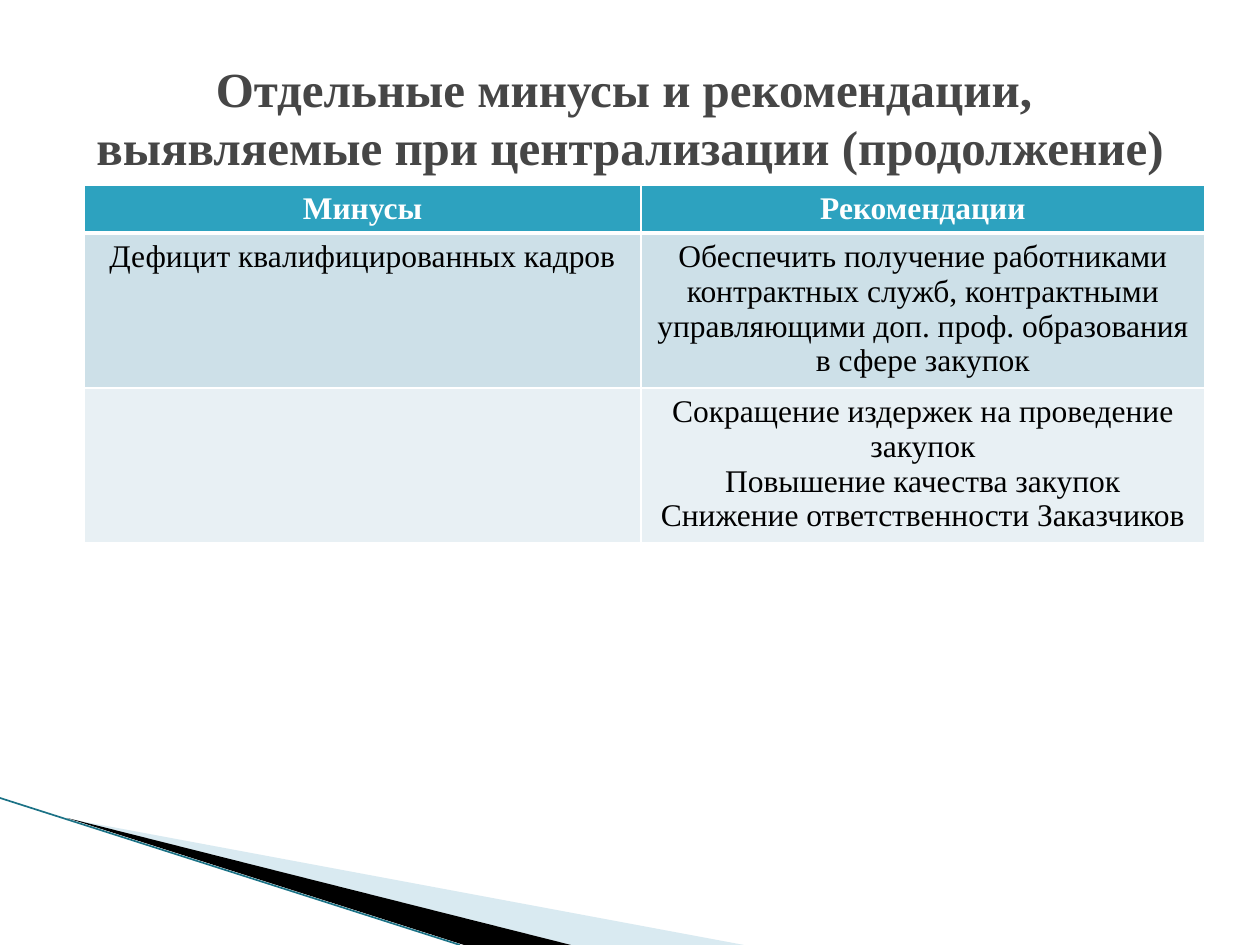
from lxml import etree
from pptx import Presentation
from pptx import util as u
from pptx.dml.color import RGBColor
from pptx.enum import text
from pptx.oxml.ns import qn

TITLE_LINES = ["Отдельные минусы и рекомендации, ",
               "выявляемые при централизации (продолжение)"]
# Each cell is a list of paragraphs
ROWS = [
    [["Минусы"], ["Рекомендации"]],
    [["Дефицит квалифицированных кадров"],
     ["Обеспечить получение работниками контрактных служб, контрактными "
      "управляющими доп. проф. образования в сфере закупок"]],
    [[],
     ["Сокращение издержек на проведение закупок",
      "Повышение качества закупок",
      "Снижение ответственности Заказчиков"]],
]
COLUMN_WIDTHS = [557, 564]
ROW_HEIGHTS = [48, 155, 155]

FONT = "Times New Roman"
WHITE = RGBColor(0xFF, 0xFF, 0xFF)
BLACK = RGBColor(0, 0, 0)
GREY = RGBColor(0x46, 0x46, 0x46)
PALE_BLUE = RGBColor(0xA0, 0xCB, 0xDC)
TEAL = RGBColor(0x1B, 0x72, 0x86)
ROW_FILLS = [RGBColor(0x2D, 0xA2, 0xBF), RGBColor(0xCD, 0xE0, 0xE8),
             RGBColor(0xE8, 0xF0, 0xF4)]

# Corner wedges: points, colour, opacity in percent
WEDGES = [
    ([(69, 819), (744, 945), (571, 945)], PALE_BLUE, 40),
    ([(67, 818), (571, 945), (464, 945)], BLACK, 100),
]
EDGE = (0, 798, 460, 945)


def px(value):
    return u.Emu(round(value * 914400 / 126))


def add_run(paragraph, words, size, color, bold):
    run = paragraph.add_run()
    run.text = words
    run.font.name = FONT
    run.font.size = u.Pt(size)
    run.font.bold = bold
    run.font.color.rgb = color


def add_wedge(slide, points, color, opacity):
    builder = slide.shapes.build_freeform(*points[0], scale=914400 / 126)
    builder.add_line_segments(points[1:], close=True)
    shape = builder.convert_to_shape()
    shape.shadow.inherit = False
    shape.line.fill.background()
    shape.fill.solid()
    shape.fill.fore_color.rgb = color
    if opacity < 100:
        color_node = shape.fill._xPr.find(".//" + qn("a:srgbClr"))
        etree.SubElement(color_node, qn("a:alpha"), val=str(opacity * 1000))


def set_borders(cell, widths):
    properties = cell._tc.get_or_add_tcPr()
    for side, points in widths.items():
        line = etree.SubElement(properties, qn("a:ln" + side), w=str(u.Pt(points)))
        fill = etree.SubElement(line, qn("a:solidFill"))
        etree.SubElement(fill, qn("a:srgbClr"), val=str(WHITE))


presentation = Presentation()
presentation.slide_width, presentation.slide_height = px(1260), px(945)
slide = presentation.slides.add_slide(presentation.slide_layouts[5])

# Corner decoration
for wedge in WEDGES:
    add_wedge(slide, *wedge)
edge = slide.shapes.add_connector(1, *map(px, EDGE))
edge.line.color.rgb = TEAL
edge.line.width = u.Pt(0.95)
etree.SubElement(edge._element.spPr, qn("a:effectLst"))

# Title
title = slide.shapes.title
title.left, title.top, title.width, title.height = map(px, (63, 38, 1134, 158))
title.text_frame.auto_size = text.MSO_AUTO_SIZE.NONE
title.text_frame.vertical_anchor = text.MSO_ANCHOR.MIDDLE
paragraph = title.text_frame.paragraphs[0]
paragraph.alignment = text.PP_ALIGN.CENTER
for index, line in enumerate(TITLE_LINES):
    if index:
        paragraph.add_line_break()
    add_run(paragraph, line, 28, GREY, True)

# Table
table = slide.shapes.add_table(
    len(ROWS), len(COLUMN_WIDTHS), px(84), px(185),
    px(sum(COLUMN_WIDTHS)), px(sum(ROW_HEIGHTS))).table
for column, width in zip(table.columns, COLUMN_WIDTHS):
    column.width = px(width)
for row, height in zip(table.rows, ROW_HEIGHTS):
    row.height = px(height)
for r, row in enumerate(ROWS):
    header = r == 0
    for c, paragraphs in enumerate(row):
        cell = table.cell(r, c)
        set_borders(cell, {"L": 1, "R": 1, "T": 3 if r == 1 else 1,
                           "B": 3 if header else 1})
        cell.fill.solid()
        cell.fill.fore_color.rgb = ROW_FILLS[r]
        for index, words in enumerate(paragraphs):
            frame = cell.text_frame
            paragraph = frame.add_paragraph() if index else frame.paragraphs[0]
            paragraph.alignment = text.PP_ALIGN.CENTER
            add_run(paragraph, words, 18, WHITE if header else BLACK, header)

presentation.save("out.pptx")
